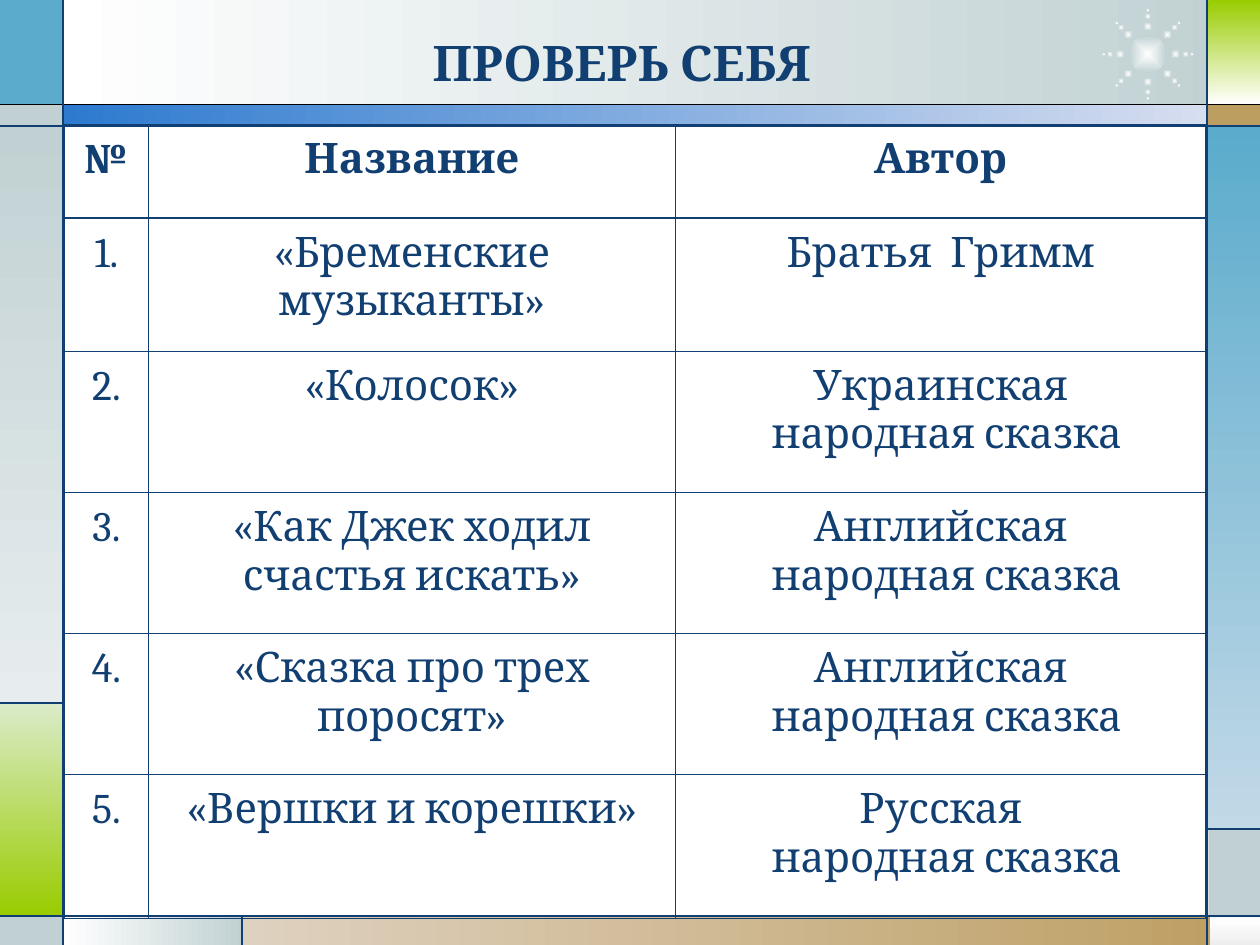
"""Build the fairy-tale answer table slide with its coloured frame."""
from math import cos, pi, sin

from lxml.etree import SubElement
from pptx import Presentation
from pptx.dml.color import RGBColor
from pptx.enum.shapes import MSO_CONNECTOR, MSO_SHAPE
from pptx.enum.text import PP_ALIGN
from pptx.oxml.ns import qn
from pptx.util import Inches, Pt

HUES = {
    "navy": "113F71", "black": "000000", "white": "FFFFFF", "grey": "C1D1D3",
    "mist": "E7EDEE", "pale": "EDEDED", "blue": "5AABCC", "sky": "C2D9E7",
    "lime": "99CC00", "mint": "DBEBC9", "tan": "BD9E61", "sand": "DED1BF",
    "royal": "2D7ACF", "ice": "D7DEF0",
}


def write(frame, text, size=24, bold=False, hue="navy", indent=0):
    frame.word_wrap = True
    for i, line in enumerate(text.split("\n")):
        para = frame.add_paragraph() if i else frame.paragraphs[0]
        if i and indent:
            para._p.get_or_add_pPr().set("marL", str(Inches(indent)))
        para.alignment = PP_ALIGN.CENTER
        run = para.add_run()
        run.text = line
        run.font.name = "Cambria"
        run.font.size = Pt(size)
        run.font.bold = bold
        run.font.color.rgb = RGBColor.from_string(HUES[hue])


def draw(shapes, kind, box, hues, angle=0):
    shape = shapes.add_shape(kind, *[Inches(n) for n in box])
    shape.shadow.inherit = False
    shape.line.fill.background()
    if len(hues) == 1:
        shape.fill.solid()
        shape.fill.fore_color.rgb = RGBColor.from_string(HUES[hues[0]])
        return shape
    shape.fill.gradient()
    shape.fill.gradient_angle = angle
    for stop, hue in zip(shape.fill.gradient_stops, hues):
        stop.color.rgb = RGBColor.from_string(HUES[hue])
    return shape


deck = Presentation()
deck.slide_width, deck.slide_height = Inches(10), Inches(7.5)
slide = deck.slides.add_slide(deck.slide_layouts[6])
shapes = slide.shapes

DOWN = 270
panels = [
    ((0.5, 0, 9.27, 0.84), ["white", "grey"], 0),
    ((0, 0, 0.5, 0.84), ["blue"], 0),
    ((0, 0.83, 0.5, 0.17), ["grey"], 0),
    ((0, 1, 0.5, 4.58), ["grey", "mist"], DOWN),
    ((0, 5.58, 0.5, 1.69), ["mint", "lime"], DOWN),
    ((0, 7.28, 0.5, 0.23), ["grey"], 0),
    ((0.5, 7.27, 1.43, 0.24), ["white", "grey"], 0),
    ((1.92, 7.27, 8.08, 0.24), ["sand", "tan"], 0),
    ((9.6, 7.28, 0.4, 0.23), ["white", "pale"], DOWN),
    ((9.59, 6.58, 0.41, 0.7), ["grey"], 0),
    ((9.58, 1, 0.42, 5.58), ["blue", "sky"], DOWN),
    ((9.58, 0.83, 0.42, 0.17), ["tan"], 0),
    ((9.59, 0, 0.41, 0.83), ["lime", "white"], DOWN),
    ((0.5, 0.83, 9.09, 0.17), ["royal", "ice"], 0),
]
for box, hues, angle in panels:
    draw(shapes, MSO_SHAPE.RECTANGLE, box, hues, angle)

dots = [(9.11, 0.43, 0.3)]
for ray in range(8):
    turn = ray * pi / 4
    for reach, size in [(0.3, 0.05), (0.35, 0.03), (0.22, 0.07)]:
        dots.append((9.11 + reach * cos(turn), 0.43 + reach * sin(turn), size))
burst = shapes.add_group_shape()
for x, y, size in dots:
    box = (x - size / 2, y - size / 2, size, size)
    dot = draw(burst.shapes, MSO_SHAPE.OVAL, box, ["white", "grey"])
    grad = dot._element.spPr.find(qn("a:gradFill"))
    grad.remove(grad.find(qn("a:lin")))
    glow = SubElement(grad, qn("a:path"), path="shape")
    SubElement(glow, qn("a:fillToRect"), l="50000", t="50000", r="50000", b="50000")

rules = [
    (0, 0.83, 10, 0.83, "black"), (0, 1, 10, 1, "navy"),
    (0, 7.27, 10, 7.27, "navy"), (0.5, 0, 0.5, 7.5, "navy"),
    (9.58, 0, 9.58, 7.5, "navy"), (0.5, 5.58, 0, 5.58, "navy"),
    (1.92, 7.27, 1.92, 7.5, "navy"), (9.58, 6.58, 10, 6.58, "navy"),
]
for *ends, hue in rules:
    rule = shapes.add_connector(MSO_CONNECTOR.STRAIGHT, *[Inches(n) for n in ends])
    rule.line.color.rgb = RGBColor.from_string(HUES[hue])
    rule.line.width = Pt(0.75)
    SubElement(rule._element.spPr, qn("a:effectLst"))

title = shapes.add_textbox(Inches(2.18), Inches(0.21), Inches(5.51), Inches(0.57))
write(title.text_frame, "ПРОВЕРЬ СЕБЯ", size=28, bold=True)

rows = [
    ("№", "Название", "Автор"),
    ("1.", "«Бременские музыканты»", "Братья  Гримм"),
    ("2.", "«Колосок»", "Украинская\nнародная сказка"),
    ("3.", "«Как Джек ходил счастья искать»", "Английская\nнародная сказка"),
    ("4.", "«Сказка про трех поросят»", "Английская\nнародная сказка"),
    ("5.", "«Вершки и корешки»", "Русская\nнародная сказка"),
]
grid = shapes.add_table(
    6, 3, Inches(0.51), Inches(0.99), Inches(9.06), Inches(6.3)).table
grid.first_row = grid.horz_banding = False
for col, width in zip(grid.columns, [0.67, 4.18, 4.21]):
    col.width = Inches(width)
for row, height in zip(grid.rows, [0.74, 1.06, 1.12, 1.12, 1.12, 1.14]):
    row.height = Inches(height)
for r, texts in enumerate(rows):
    for c, text in enumerate(texts):
        cell = grid.cell(r, c)
        cell.margin_left = cell.margin_right = Inches(0.09)
        cell.margin_top = cell.margin_bottom = Inches(0.09)
        write(cell.text_frame, text, bold=r == 0, indent=0.1)
        props = cell._tc.get_or_add_tcPr()
        for side in ["lnL", "lnR", "lnT", "lnB"]:
            edge = SubElement(props, qn("a:" + side), w=str(Pt(1)))
            fill = SubElement(edge, qn("a:solidFill"))
            SubElement(fill, qn("a:srgbClr"), val=HUES["navy"])
        cell.fill.background()

deck.save("out.pptx")
